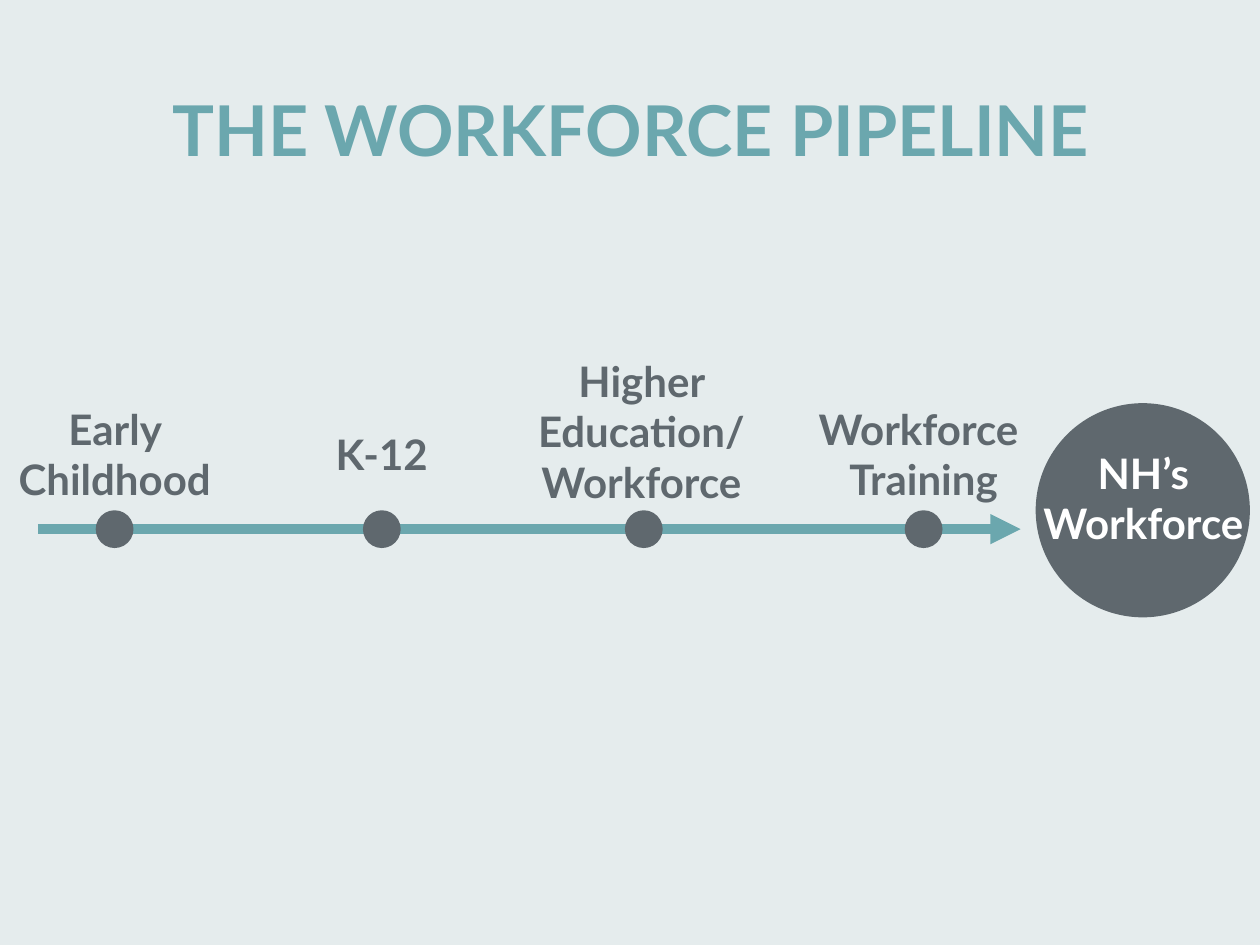
from pptx import Presentation
from pptx.dml.color import RGBColor
from pptx.enum.shapes import MSO_CONNECTOR, MSO_SHAPE
from pptx.enum.text import MSO_AUTO_SIZE as AutoSize, PP_ALIGN as Align
from pptx.oxml.ns import qn
from pptx.util import Pt
from lxml.etree import SubElement

FONT = "Lato"
TEAL, GRAY, WHITE, PALE = "6BA7AE", "5F686E", "FFFFFF", "E5ECED"

# Content: boxes are left, top, width, height in points
TITLE = (["THE WORKFORCE PIPELINE"], (88.56, 46.08, 543.6, 55.44))
STAGES = [  # label lines, label box, dot centre
    (["Early Childhood"], (0, 226.8, 131.04, 65.52), 65.5),
    (["K-12"], (167.76, 241.2, 100.8, 36), 218.2),
    (["Higher Education/", "Workforce"], (297.36, 199.44, 138.24, 94.32), 367.9),
    (["Workforce ", "Training"], (450.72, 226.8, 154.08, 65.52), 527.8),
]
GOAL = (["NH’s", "Workforce"], (587.52, 252, 131.76, 65.52))
GOAL_CIRCLE = (591.84, 230.4, 122.4)  # left, top, diameter
LINE_START, LINE_END, LINE_Y = 21.6, 583.2, 302.4
DOT = 21.6


def color(value):
    return RGBColor.from_string(value)


def add_text(shapes, lines, place, size, ink):
    box = shapes.add_textbox(*map(Pt, place))
    frame = box.text_frame
    frame.word_wrap = True
    frame.auto_size = AutoSize.SHAPE_TO_FIT_TEXT
    frame.text = "\n".join(lines)
    for para in frame.paragraphs:
        para.alignment = Align.CENTER
        para.font.name = FONT
        para.font.size = Pt(size)
        para.font.bold = True
        para.font.color.rgb = color(ink)


def add_circle(shapes, left, top, diameter):
    circle = shapes.add_shape(
        MSO_SHAPE.OVAL, Pt(left), Pt(top), Pt(diameter), Pt(diameter))
    circle.shadow.inherit = False
    circle.fill.solid()
    circle.fill.fore_color.rgb = color(GRAY)
    circle.line.fill.background()


def add_arrow(shapes, start, end, y):
    arrow = shapes.add_connector(
        MSO_CONNECTOR.STRAIGHT, Pt(start), Pt(y), Pt(end), Pt(y))
    arrow.line.color.rgb = color(TEAL)
    arrow.line.width = Pt(5.75)
    SubElement(arrow.line._get_or_add_ln(), qn("a:tailEnd"), type="triangle")
    SubElement(arrow._element.spPr, qn("a:effectLst"))


deck = Presentation()
deck.slide_width, deck.slide_height = Pt(720), Pt(540)
page = deck.slides.add_slide(deck.slide_layouts[6])
page.background.fill.solid()
page.background.fill.fore_color.rgb = color(PALE)

# Title
add_text(page.shapes, *TITLE, 40, TEAL)

# Timeline: arrow, stage labels, then dots on the line
timeline = page.shapes.add_group_shape().shapes
add_arrow(timeline, LINE_START, LINE_END, LINE_Y)
for lines, place, _ in STAGES:
    add_text(timeline, lines, place, 24, GRAY)
for _, _, center in STAGES:
    add_circle(timeline, center - DOT / 2, LINE_Y - DOT / 2, DOT)

# Goal circle
goal = page.shapes.add_group_shape().shapes
add_circle(goal, *GOAL_CIRCLE)
add_text(goal, *GOAL, 24, WHITE)

deck.save("out.pptx")
